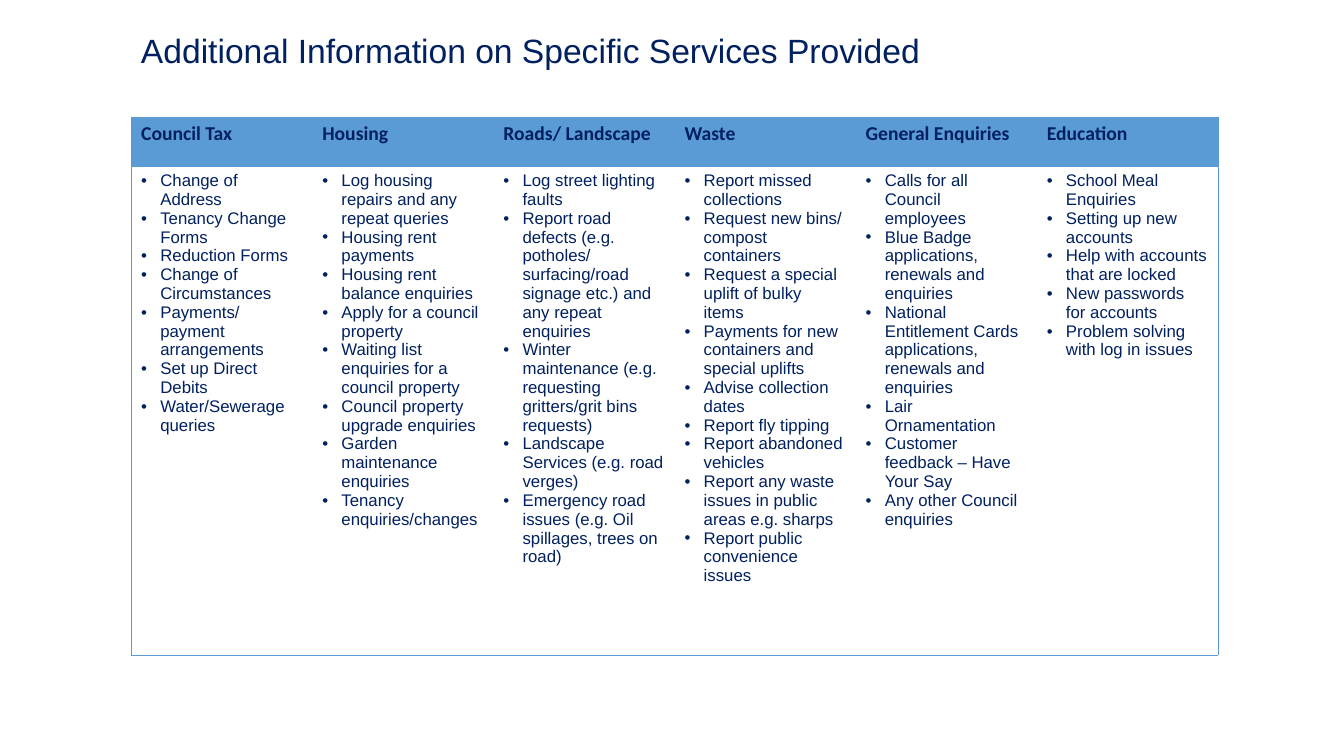
from pptx import Presentation, util as u
from pptx.dml.color import RGBColor
from pptx.enum import text
from pptx.oxml.ns import qn
from lxml import etree

NAVY = "002060"
BLUE = "5B9BD5"
INDENT = u.Inches(0.19)

SERVICES = {
    "Council Tax": [
        "Change of Address", "Tenancy Change Forms", "Reduction Forms",
        "Change of Circumstances", "Payments/ payment arrangements",
        "Set up Direct Debits", "Water/Sewerage queries",
    ],
    "Housing": [
        "Log housing repairs and any repeat queries", "Housing rent payments",
        "Housing rent balance enquiries", "Apply for a council property",
        "Waiting list enquiries for a council property",
        "Council property upgrade enquiries", "Garden maintenance enquiries",
        "Tenancy enquiries/changes",
    ],
    "Roads/ Landscape": [
        "Log street lighting faults",
        "Report road defects (e.g. potholes/ surfacing/road signage etc.) and any repeat enquiries",
        "Winter maintenance (e.g. requesting gritters/grit bins requests)",
        "Landscape Services (e.g. road verges)",
        "Emergency road issues (e.g. Oil spillages, trees on road)",
    ],
    "Waste": [
        "Report missed collections", "Request new bins/ compost containers",
        "Request a special uplift of bulky items",
        "Payments for new containers and special uplifts",
        "Advise collection dates", "Report fly tipping",
        "Report abandoned vehicles",
        "Report any waste issues in public areas e.g. sharps",
        "Report public convenience issues",
    ],
    "General Enquiries": [
        "Calls for all Council employees",
        "Blue Badge applications, renewals and enquiries",
        "National Entitlement Cards applications, renewals and enquiries",
        "Lair Ornamentation", "Customer feedback – Have Your Say",
        "Any other Council enquiries",
    ],
    "Education": [
        "School Meal Enquiries", "Setting up new accounts",
        "Help with accounts that are locked", "New passwords for accounts",
        "Problem solving with log in issues",
    ],
}


def colour(value):
    return RGBColor.from_string(value)


def add_span(para, words, size, font, bold=False):
    span = para.add_run()
    span.text = words
    span.font.size = u.Pt(size)
    span.font.name = font
    span.font.bold = bold
    span.font.color.rgb = colour(NAVY)


def add_bullet(para):
    props = para._p.get_or_add_pPr()
    props.set("marL", str(INDENT))
    props.set("indent", str(-INDENT))
    etree.SubElement(props, qn("a:buFont"), typeface="Arial")
    etree.SubElement(props, qn("a:buChar"), char="•")


def set_borders(cell, drawn):
    props = cell._tc.get_or_add_tcPr()
    for side in "LRTB":
        line = etree.SubElement(props, qn("a:ln" + side), w=str(u.Pt(0.5)))
        if side in drawn:
            fill = etree.SubElement(line, qn("a:solidFill"))
            etree.SubElement(fill, qn("a:srgbClr"), val=BLUE)
        else:
            etree.SubElement(line, qn("a:noFill"))


def add_title(page, left, top, width, height):
    box = page.shapes.add_textbox(left, top, width, height)
    frame = box.text_frame
    frame.word_wrap = True
    frame.auto_size = text.MSO_AUTO_SIZE.SHAPE_TO_FIT_TEXT
    add_span(frame.paragraphs[0],
             "Additional Information on Specific Services Provided", 24, "Arial")


def add_services_table(page, left, top, width, height):
    count = len(SERVICES)
    table = page.shapes.add_table(2, count, left, top, width, height).table
    table.first_row = table.horz_banding = False
    header_height = u.Inches(0.49)
    table.rows[0].height = header_height
    table.rows[1].height = height - header_height

    for index, (service, tasks) in enumerate(SERVICES.items()):
        table.columns[index].width = width // count
        sides = {0: "L", count - 1: "R"}.get(index, "")

        header = table.cell(0, index)
        set_borders(header, sides + "TB")
        header.fill.solid()
        header.fill.fore_color.rgb = colour(BLUE)
        add_span(header.text_frame.paragraphs[0], service, 14, "Calibri", True)

        body = table.cell(1, index)
        set_borders(body, sides + "TB")
        body.fill.background()
        frame = body.text_frame
        for number, task in enumerate(tasks):
            para = frame.add_paragraph() if number else frame.paragraphs[0]
            add_bullet(para)
            add_span(para, task, 12, "Arial")


def main():
    deck = Presentation()
    deck.slide_width, deck.slide_height = u.Inches(13.33), u.Inches(7.5)
    page = deck.slides.add_slide(deck.slide_layouts[6])
    left = u.Inches(1.3)
    add_services_table(page, left, u.Inches(1.16), u.Inches(10.78), u.Inches(5.34))
    add_title(page, left, u.Inches(0.25), u.Inches(8.51), u.Inches(0.5))
    deck.save("out.pptx")


if __name__ == "__main__":
    main()
